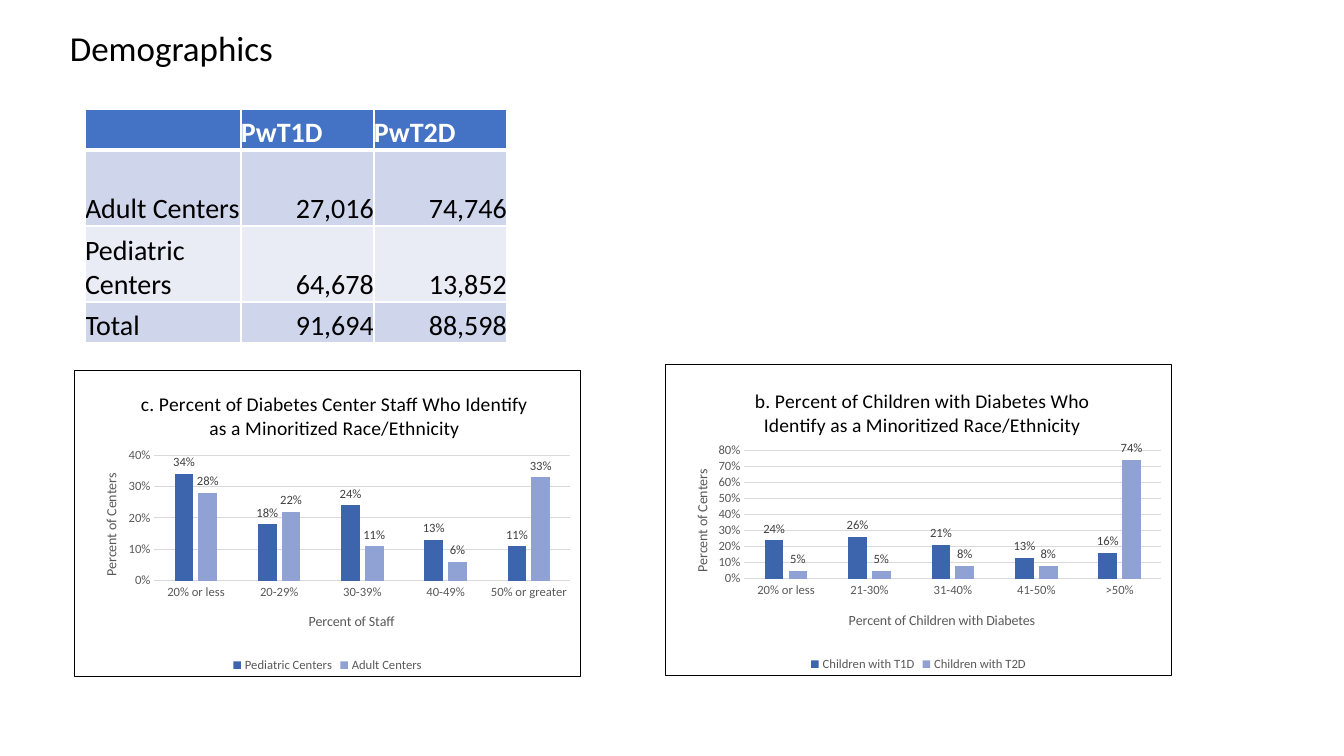
from dataclasses import dataclass

from lxml import etree
from pptx import Presentation
from pptx.chart.data import CategoryChartData
from pptx.dml.color import RGBColor
from pptx.enum.chart import XL_CHART_TYPE, XL_LABEL_POSITION, XL_LEGEND_POSITION, XL_TICK_MARK
from pptx.enum.text import MSO_ANCHOR, PP_ALIGN
from pptx.oxml import parse_xml
from pptx.oxml.ns import nsdecls, qn
from pptx.util import Emu, Pt

CLUSTERED = XL_CHART_TYPE.COLUMN_CLUSTERED
OUTSIDE_END = XL_LABEL_POSITION.OUTSIDE_END
LEGEND_BOTTOM = XL_LEGEND_POSITION.BOTTOM
NO_TICK = XL_TICK_MARK.NONE
LEFT, RIGHT = PP_ALIGN.LEFT, PP_ALIGN.RIGHT
MIDDLE, BOTTOM = MSO_ANCHOR.MIDDLE, MSO_ANCHOR.BOTTOM

PAGE_WIDTH, PAGE_HEIGHT = 1344, 756
EMU_PER_PX = 12192000 / PAGE_WIDTH
FONT = "Calibri"
COLORS = {
    "black": "000000", "white": "FFFFFF", "header": "4472C4",
    "band": "CFD5EA", "plain": "E9EBF5", "axis": "595959",
    "label": "404040", "grid": "D9D9D9", "dark": "3C65AE", "light": "90A2D3",
}


@dataclass
class Box:
    left: int
    top: int
    width: int
    height: int


@dataclass
class ColumnChart:
    frame: Box
    plot: Box
    title: str
    category_title: str
    title_spots: list[tuple[int, int]]  # chart, category axis, value axis
    categories: list[str]
    series: dict[str, list[float]]
    maximum: float


TABLE_BOX = Box(85, 109, 422, 234)
COLUMN_WIDTHS = [156, 133, 133]
ROW_HEIGHTS = [41, 76, 76, 41]
TABLE_ROWS = [
    ["", "PwT1D", "PwT2D"],
    ["Adult Centers", "27,016", "74,746"],
    ["Pediatric Centers", "64,678", "13,852"],
    ["Total", "91,694", "88,598"],
]
CHARTS = [
    ColumnChart(
        Box(665, 364, 507, 312), Box(744, 450, 418, 129),
        "b. Percent of Children with Diabetes Who Identify as a Minoritized Race/Ethnicity",
        "Percent of Children with Diabetes",
        [(751, 383), (846, 609), (690, 467)],
        ["20% or less", "21-30%", "31-40%", "41-50%", ">50%"],
        {"Children with T1D": [0.24, 0.26, 0.21, 0.13, 0.16],
         "Children with T2D": [0.05, 0.05, 0.08, 0.08, 0.74]}, 0.8),
    ColumnChart(
        Box(74, 370, 507, 307), Box(154, 455, 417, 126),
        "c. Percent of Diabetes Center Staff Who Identify as a Minoritized Race/Ethnicity",
        "Percent of Staff",
        [(137, 386), (306, 610), (99, 471)],
        ["20% or less", "20-29%", "30-39%", "40-49%", "50% or greater"],
        {"Pediatric Centers": [0.34, 0.18, 0.24, 0.13, 0.11],
         "Adult Centers": [0.28, 0.22, 0.11, 0.06, 0.33]}, 0.4),
]


def px(length: int) -> Emu:
    return Emu(round(length * EMU_PER_PX))


def place(box: Box) -> list[Emu]:
    return [px(box.left), px(box.top), px(box.width), px(box.height)]


def rgb(name: str) -> RGBColor:
    return RGBColor.from_string(COLORS[name])


def style_font(font, size: float, color: str, bold: bool = False) -> None:
    font.name, font.size, font.bold = FONT, Pt(size), bold
    font.color.rgb = rgb(color)


def write(frame, text: str, *, size: float, color: str = "black", bold: bool = False,
          align=None, spacing: float | None = None) -> None:
    para = frame.paragraphs[0]
    if align is not None:
        para.alignment = align
    if spacing is not None:
        para.line_spacing = spacing
    span = para.add_run()
    span.text = text
    style_font(span.font, size, color, bold)


def add_title(page) -> None:
    frame = page.shapes.add_textbox(*place(Box(60, 25, 1210, 50))).text_frame
    frame.word_wrap = True
    frame.vertical_anchor = MIDDLE
    write(frame, "Demographics", size=25, spacing=0.9)


def border_cell(cell, bottom_width: int) -> None:
    properties = cell._tc.get_or_add_tcPr()
    widths = {"lnL": 1, "lnR": 1, "lnT": 1, "lnB": bottom_width}
    for index, (side, width) in enumerate(widths.items()):
        properties.insert(index, parse_xml(
            f'<a:{side} {nsdecls("a")} w="{Pt(width)}"><a:solidFill>'
            f'<a:srgbClr val="{COLORS["white"]}"/></a:solidFill></a:{side}>'))


def add_centers_table(page) -> None:
    table = page.shapes.add_table(
        len(ROW_HEIGHTS), len(COLUMN_WIDTHS), *place(TABLE_BOX)).table
    for column, width in zip(table.columns, COLUMN_WIDTHS):
        column.width = px(width)
    for r, (row, texts) in enumerate(zip(table.rows, TABLE_ROWS)):
        row.height = px(ROW_HEIGHTS[r])
        header = r == 0
        fill = "header" if header else "band" if r % 2 else "plain"
        for c, (cell, text) in enumerate(zip(row.cells, texts)):
            cell.margin_left = cell.margin_right = cell.margin_top = cell.margin_bottom = 0
            cell.vertical_anchor = BOTTOM
            cell.fill.solid()
            cell.fill.fore_color.rgb = rgb(fill)
            border_cell(cell, 3 if header else 1)
            write(cell.text_frame, text, size=20, color="white" if header else "black",
                  bold=header, align=LEFT if header or c == 0 else RIGHT)


def set_layout(parent, values: dict[str, float], inner: bool = False) -> None:
    for old in parent.findall(qn("c:layout")):
        parent.remove(old)
    layout = etree.Element(qn("c:layout"))
    manual = etree.SubElement(layout, qn("c:manualLayout"))
    settings = {"layoutTarget": "inner"} if inner else {}
    settings |= {"xMode": "edge", "yMode": "edge"}
    settings |= {key: f"{value:.4f}" for key, value in values.items()}
    for key, value in settings.items():
        etree.SubElement(manual, qn(f"c:{key}")).set("val", value)
    text = parent.find(qn("c:tx"))
    parent.insert(0 if text is None else 1, layout)


def arrange(chart, item: ColumnChart) -> None:
    frame, plot = item.frame, item.plot

    def corner(left: int, top: int) -> dict[str, float]:
        return {"x": (left - frame.left) / frame.width, "y": (top - frame.top) / frame.height}

    size = {"w": plot.width / frame.width, "h": plot.height / frame.height}
    area = next(chart.element.iter(qn("c:plotArea")))
    set_layout(area, corner(plot.left, plot.top) | size, inner=True)
    titles = list(chart.element.iter(qn("c:title")))
    for title, spot in zip(titles, item.title_spots):
        set_layout(title, corner(*spot))
    next(titles[-1].iter(qn("a:bodyPr"))).set("rot", "-5400000")


def add_column_chart(page, item: ColumnChart) -> None:
    data = CategoryChartData(number_format="0%")
    data.categories = item.categories
    for name, values in item.series.items():
        data.add_series(name, values)
    chart = page.shapes.add_chart(CLUSTERED, *place(item.frame), data).chart
    style_font(chart.font, 10, "black")
    chart.has_title = True
    write(chart.chart_title.text_frame, item.title, size=14)

    # Axes
    categories, values = chart.category_axis, chart.value_axis
    for axis, title in ((categories, item.category_title), (values, "Percent of Centers")):
        write(axis.axis_title.text_frame, title, size=10, color="axis")
        axis.major_tick_mark = axis.minor_tick_mark = NO_TICK
        style_font(axis.tick_labels.font, 9, "axis")
    categories.format.line.color.rgb = rgb("grid")
    categories.format.line.width = Pt(0.75)
    values.format.line.fill.background()
    values.minimum_scale, values.maximum_scale, values.major_unit = 0, item.maximum, 0.1
    values.tick_labels.number_format = "0%"
    values.tick_labels.number_format_is_linked = False
    values.major_gridlines.format.line.color.rgb = rgb("grid")
    values.major_gridlines.format.line.width = Pt(0.75)

    # Columns and their labels
    plot = chart.plots[0]
    plot.gap_width, plot.overlap, plot.vary_by_categories = 219, -27, False
    for series, color in zip(plot.series, ("dark", "light")):
        series.format.fill.solid()
        series.format.fill.fore_color.rgb = rgb(color)
        labels = series.data_labels
        labels.show_value = True
        labels.position = OUTSIDE_END
        labels.number_format, labels.number_format_is_linked = "0%", False
        style_font(labels.font, 9, "label")

    # Legend and frame
    chart.has_legend = True
    chart.legend.position = LEGEND_BOTTOM
    chart.legend.include_in_layout = False
    style_font(chart.legend.font, 9, "axis")
    chart.element.find(qn("c:chart")).addnext(parse_xml(
        f'<c:spPr {nsdecls("c", "a")}><a:solidFill><a:srgbClr val="{COLORS["white"]}"/>'
        f'</a:solidFill><a:ln w="{Pt(0.75)}"><a:solidFill>'
        f'<a:srgbClr val="{COLORS["black"]}"/></a:solidFill></a:ln></c:spPr>'))
    arrange(chart, item)


def main() -> None:
    deck = Presentation()
    deck.slide_width, deck.slide_height = px(PAGE_WIDTH), px(PAGE_HEIGHT)
    page = deck.slides.add_slide(deck.slide_layouts[6])
    add_title(page)
    add_centers_table(page)
    for item in CHARTS:
        add_column_chart(page, item)
    deck.save("out.pptx")


if __name__ == "__main__":
    main()
